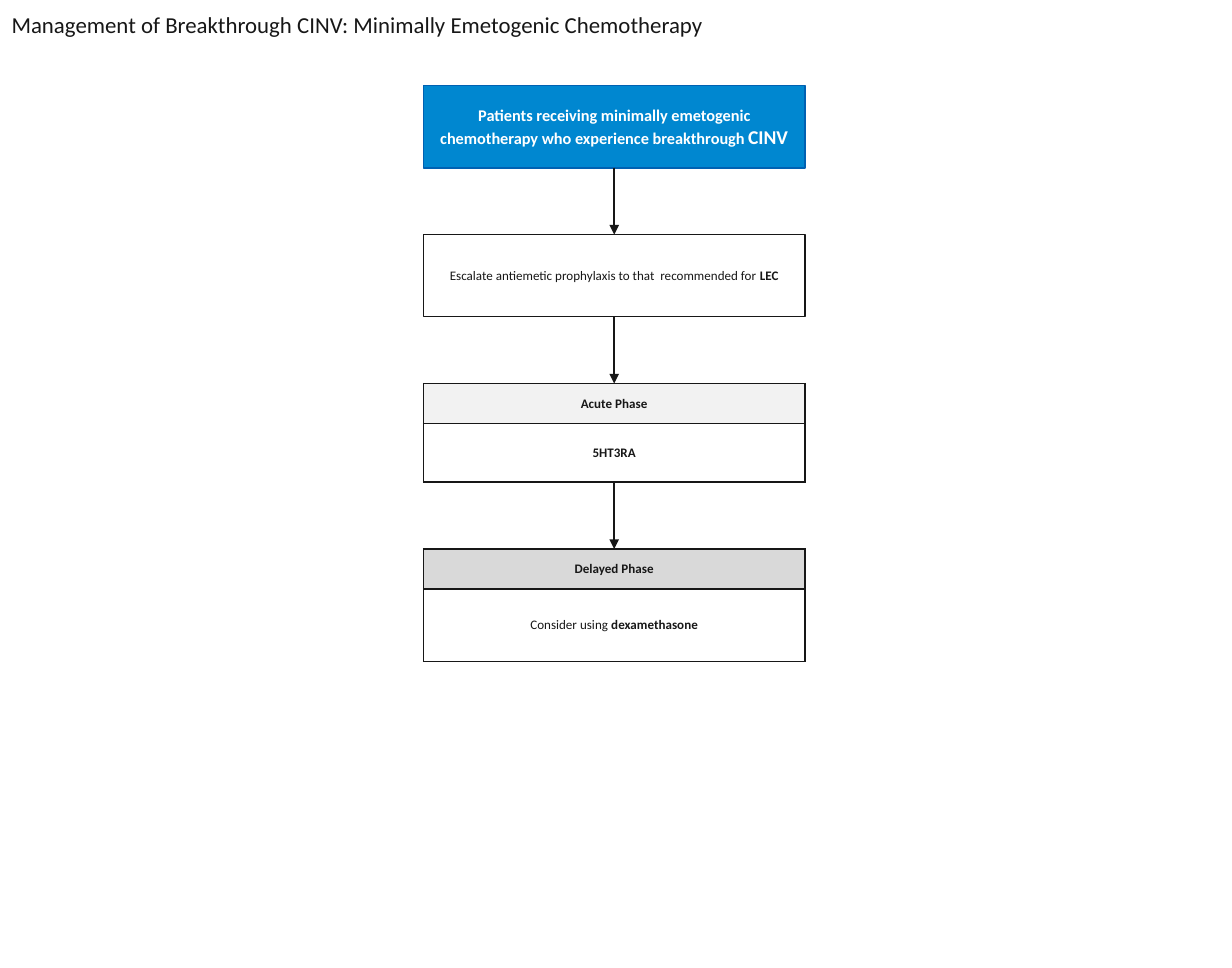
from lxml import etree
from pptx import Presentation
from pptx.dml.color import RGBColor
from pptx.enum.shapes import MSO_CONNECTOR, MSO_SHAPE
from pptx.enum.text import MSO_ANCHOR, PP_ALIGN
from pptx.oxml.ns import qn
from pptx.util import Inches, Pt

RECTANGLE = MSO_SHAPE.RECTANGLE
STRAIGHT = MSO_CONNECTOR.STRAIGHT
MIDDLE = MSO_ANCHOR.MIDDLE
LEFT, CENTER = PP_ALIGN.LEFT, PP_ALIGN.CENTER

COLORS = {
    "ink": "171717",
    "white": "FFFFFF",
    "blue": "0087D0",
    "blue_edge": "0061B2",
    "acute": "F2F2F2",
    "delayed": "D9D9D9",
}

# Grid of 100 columns by 100 rows
FLOW_LEFT, FLOW_WIDTH = 34.38, 30.95
FLOW_TOP, GAP = 8.85, 6.91
BOX_HEIGHT, HEADER_HEIGHT = 8.48, 4.12


class FlowSlide:
    font = "Calibri"
    border, arrow_width = Pt(1), Pt(1.5)

    def __init__(self, prs):
        self.column = prs.slide_width / 100
        self.row = prs.slide_height / 100
        self.shapes = prs.slides.add_slide(prs.slide_layouts[6]).shapes

    def place(self, left, top, width, height):
        return (round(left * self.column), round(top * self.row),
                round(width * self.column), round(height * self.row))

    def color(self, name):
        return RGBColor.from_string(COLORS[name])

    def add_text(self, frame, runs, color="ink", align=CENTER):
        """Each run is (text, size, bold)."""
        frame.word_wrap = True
        paragraph = frame.paragraphs[0]
        paragraph.alignment = align
        for text, size, bold in runs:
            run = paragraph.add_run()
            run.text = text
            font_format = {"name": self.font, "size": Pt(size), "bold": bold}
            for attribute, value in font_format.items():
                setattr(run.font, attribute, value)
            run.font.color.rgb = self.color(color)

    def title(self, text, width, height):
        heading = self.shapes.add_textbox(*self.place(0, 0, width, height))
        heading.text_frame.vertical_anchor = MIDDLE
        self.add_text(heading.text_frame, [(text, 14, False)], align=LEFT)

    def box(self, top, runs, fill="white", edge="ink", ink="ink"):
        step = self.shapes.add_shape(
            RECTANGLE, *self.place(FLOW_LEFT, top, FLOW_WIDTH, BOX_HEIGHT))
        step.shadow.inherit = False
        step.fill.solid()
        step.fill.fore_color.rgb = self.color(fill)
        step.line.color.rgb = self.color(edge)
        step.line.width = self.border
        step.text_frame.vertical_anchor = MIDDLE
        self.add_text(step.text_frame, runs, ink)
        return top + BOX_HEIGHT

    def phase(self, top, name, header_fill, body_runs, body_height):
        heights = [HEADER_HEIGHT, body_height]
        table = self.shapes.add_table(
            2, 1, *self.place(FLOW_LEFT, top, FLOW_WIDTH, sum(heights))).table
        table.first_row = table.horz_banding = False
        contents = [[(name, 8, True)], body_runs]
        for index, (height, runs) in enumerate(zip(heights, contents)):
            table.rows[index].height = round(height * self.row)
            cell = table.cell(index, 0)
            cell.vertical_anchor = MIDDLE
            self.add_text(cell.text_frame, runs)
            self.outline(cell)
            cell.fill.solid()
            cell.fill.fore_color.rgb = self.color("white" if index else header_fill)
        return top + sum(heights)

    def outline(self, cell):
        properties = cell._tc.get_or_add_tcPr()
        for side in ("lnL", "lnR", "lnT", "lnB"):
            line = etree.SubElement(properties, qn(f"a:{side}"), w=str(self.border))
            fill = etree.SubElement(line, qn("a:solidFill"))
            etree.SubElement(fill, qn("a:srgbClr"), val=COLORS["ink"])

    def arrow(self, top):
        x, start, _, length = self.place(FLOW_LEFT + FLOW_WIDTH / 2, top, 0, GAP)
        link = self.shapes.add_connector(STRAIGHT, x, start, x, start + length)
        link.line.color.rgb = self.color("ink")
        link.line.width = self.arrow_width
        etree.SubElement(link.line._get_or_add_ln(), qn("a:tailEnd"), type="triangle")
        etree.SubElement(link._element.spPr, qn("a:effectLst"))
        return top + GAP


def main():
    prs = Presentation()
    prs.slide_width, prs.slide_height = Inches(10.5), Inches(8.25)
    slide = FlowSlide(prs)

    # Heading
    slide.title("Management of Breakthrough CINV: Minimally Emetogenic Chemotherapy",
                94.29, 5.09)

    # Patients and escalation
    y = slide.box(FLOW_TOP, [
        ("Patients receiving minimally emetogenic chemotherapy "
         "who experience breakthrough ", 10, True),
        ("CINV", 12, True),
    ], "blue", "blue_edge", "white")
    y = slide.arrow(y)
    y = slide.box(y, [
        ("Escalate antiemetic prophylaxis to that  recommended for ", 8, False),
        ("LEC", 8, True),
    ])
    y = slide.arrow(y)

    # Treatment phases
    y = slide.phase(y, "Acute Phase", "acute", [("5HT3RA", 8, True)], 6.06)
    y = slide.arrow(y)
    slide.phase(y, "Delayed Phase", "delayed", [
        ("Consider using ", 8, False),
        ("dexamethasone", 8, True),
    ], 7.52)

    prs.save("out.pptx")


if __name__ == "__main__":
    main()
